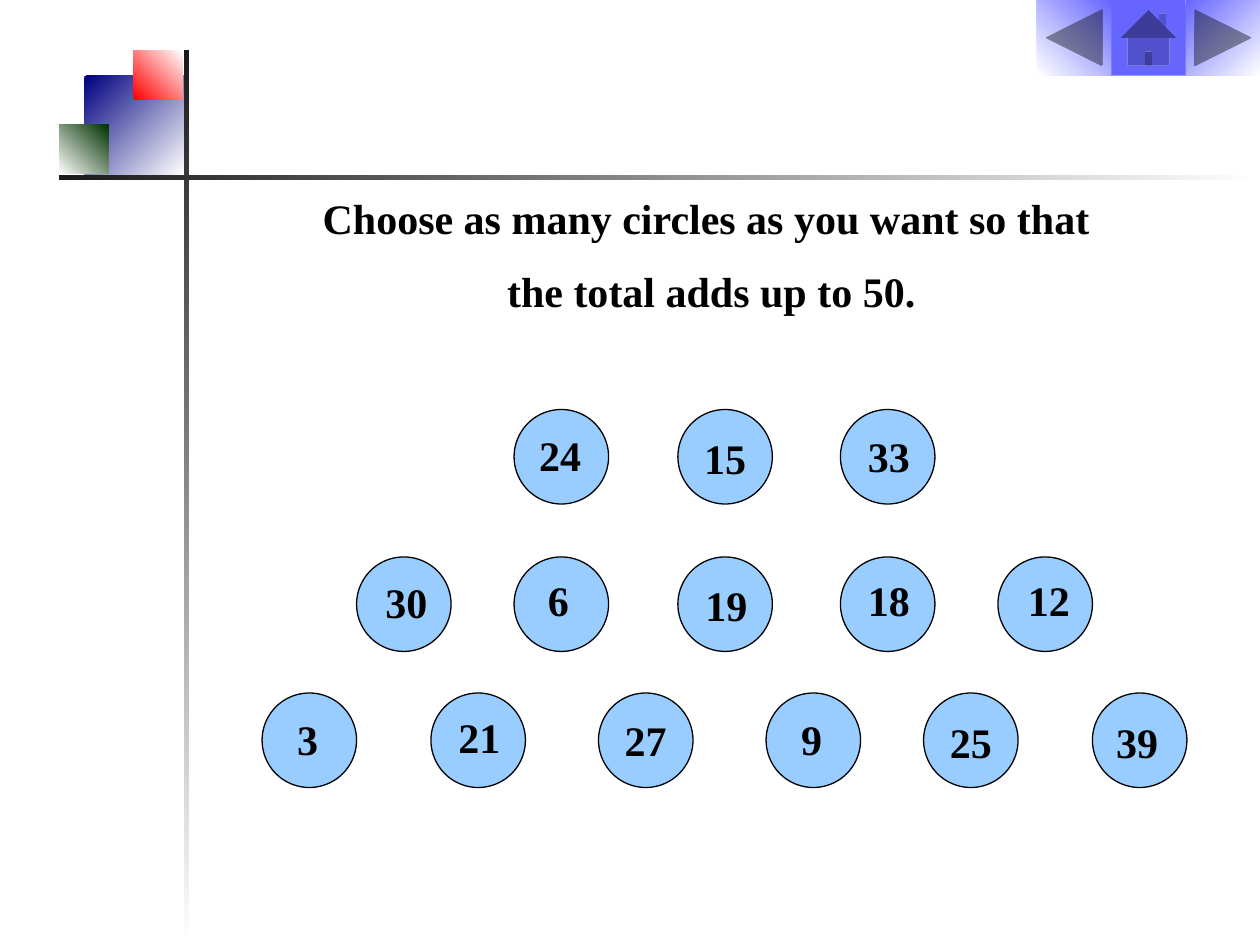
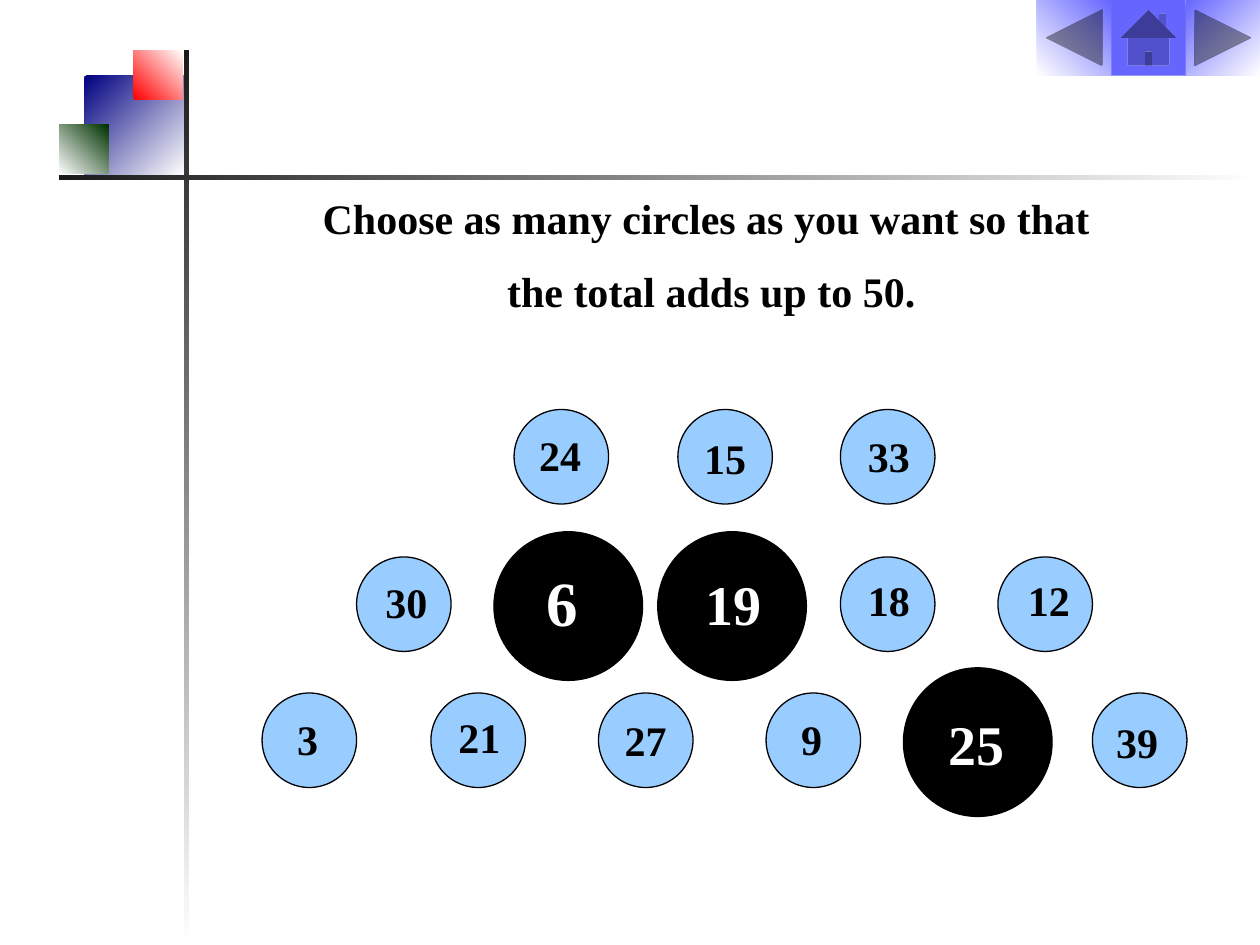
from dataclasses import dataclass

from pptx import Presentation
from pptx.dml.color import RGBColor
from pptx.enum.shapes import MSO_SHAPE
from pptx.enum.text import MSO_AUTO_SIZE, PP_ALIGN
from pptx.util import Inches, Pt

RECTANGLE = MSO_SHAPE.RECTANGLE
OVAL = MSO_SHAPE.OVAL
BACK_BUTTON = MSO_SHAPE.ACTION_BUTTON_BACK_OR_PREVIOUS
NEXT_BUTTON = MSO_SHAPE.ACTION_BUTTON_FORWARD_OR_NEXT
HOME_BUTTON = MSO_SHAPE.ACTION_BUTTON_HOME
LEFT, CENTER = PP_ALIGN.LEFT, PP_ALIGN.CENTER
GROW = MSO_AUTO_SIZE.SHAPE_TO_FIT_TEXT


@dataclass(frozen=True)
class Theme:
    font: str = "Times New Roman"
    body_size: int = 24
    line_gap: int = 13
    outline_width: float = 0.75
    ink: str = "000000"
    paper: str = "FFFFFF"
    circle: str = "99CCFF"
    navy: str = "000080"
    red: str = "FF0000"
    green: str = "003300"
    rule: str = "1A1A1A"
    button: str = "6666FF"


THEME = Theme()

INSTRUCTION = [
    "Choose as many circles as you want so that ",
    "the total adds up to 50.",
]

CIRCLE_SIZE = 0.75
CHOSEN_SIZE = 1.18
CHOSEN_SHIFT = (-0.16, -0.2)
BUTTON_WIDTH, BUTTON_HEIGHT = 0.59, 0.6

# number, circle left, label offset right, label offset down
CIRCLE_ROWS = {
    3.25: [(24, 4.08, 0.10, 0.11), (15, 5.38, 0.11, 0.13), (33, 6.67, 0.12, 0.12)],
    4.42: [(30, 2.83, 0.13, 0.11), (6, 4.08, 0.17, 0.09), (19, 5.38, 0.12, 0.13),
           (18, 6.67, 0.12, 0.09), (12, 7.92, 0.14, 0.09)],
    5.5: [(3, 2.08, 0.18, 0.11), (21, 3.42, 0.12, 0.10), (27, 4.75, 0.11, 0.12),
          (9, 6.08, 0.18, 0.11), (25, 7.33, 0.11, 0.14), (39, 8.67, 0.09, 0.14)],
}

# number: label size, label offset right, label offset down
ANSWER = {6: (36, 0.16, 0), 19: (32, 0.12, 0.05), 25: (32, 0.10, 0.08)}


def rgb(value):
    return RGBColor.from_string(value)


def add_filled(slide, preset, box, color, end_color=None, angle=0, outline=None):
    shape = slide.shapes.add_shape(preset, *map(Inches, box))
    shape.shadow.inherit = False
    if end_color:
        shape.fill.gradient()
        shape.fill.gradient_angle = -angle % 360
        for stop, stop_color in zip(shape.fill.gradient_stops, (color, end_color)):
            stop.color.rgb = rgb(stop_color)
    else:
        shape.fill.solid()
        shape.fill.fore_color.rgb = rgb(color)
    if outline:
        shape.line.color.rgb = rgb(outline)
        shape.line.width = Pt(THEME.outline_width)
    else:
        shape.line.fill.background()


def add_text(slide, box, lines, size=THEME.body_size, color=THEME.ink, align=LEFT):
    frame = slide.shapes.add_textbox(*map(Inches, box)).text_frame
    frame.word_wrap = True
    frame.auto_size = GROW
    for index, line in enumerate(lines):
        paragraph = frame.add_paragraph() if index else frame.paragraphs[0]
        if index:
            paragraph.space_before = Pt(THEME.line_gap)
        paragraph.alignment = align
        run = paragraph.add_run()
        run.text = line
        run.font.name = THEME.font
        run.font.size = Pt(size)
        run.font.bold = True
        run.font.color.rgb = rgb(color)


def add_frame(slide):
    t = THEME
    add_filled(slide, RECTANGLE, (0.67, 0.6, 0.79, 0.79), t.navy, t.paper, 45)
    add_filled(slide, RECTANGLE, (1.06, 0.4, 0.39, 0.39), t.red, t.paper, 315)
    add_filled(slide, RECTANGLE, (0.47, 0.99, 0.39, 0.39), t.paper, t.green, 315)
    add_filled(slide, RECTANGLE, (1.46, 0.4, 0.04, 7.1), t.rule, t.paper, 90)
    add_filled(slide, RECTANGLE, (0.47, 1.39, 9.53, 0.04), t.rule, t.paper)


def add_navigation(slide):
    buttons = [
        (BACK_BUTTON, 8.23, THEME.paper, THEME.button, 315),
        (NEXT_BUTTON, 9.41, THEME.button, THEME.paper, 45),
        (HOME_BUTTON, 8.82, THEME.button, None, 0),
    ]
    for preset, left, color, end_color, angle in buttons:
        box = (left, 0, BUTTON_WIDTH, BUTTON_HEIGHT)
        add_filled(slide, preset, box, color, end_color, angle)


def add_number(slide, number, left, top, right, down, chosen):
    size, fill, ink, diameter = THEME.body_size, THEME.circle, THEME.ink, CIRCLE_SIZE
    circle_left, circle_top = left, top
    if number in chosen:
        size, right, down = chosen[number]
        fill, ink, diameter = THEME.ink, THEME.paper, CHOSEN_SIZE
        circle_left += CHOSEN_SHIFT[0]
        circle_top += CHOSEN_SHIFT[1]
    add_filled(slide, OVAL, (circle_left, circle_top, diameter, diameter), fill,
               outline=THEME.ink)
    label_height = 0.1 + size / 60
    add_text(slide, (left + right, top + down, CIRCLE_SIZE, label_height),
             [str(number)], size=size, color=ink)


def add_puzzle(deck, chosen):
    slide = deck.slides.add_slide(deck.slide_layouts[6])
    add_frame(slide)
    add_navigation(slide)
    add_text(slide, (2.12, 1.48, 7.05, 1.1), INSTRUCTION, align=CENTER)
    for top, row in CIRCLE_ROWS.items():
        for number, left, right, down in row:
            add_number(slide, number, left, top, right, down, chosen)


def main():
    deck = Presentation()
    deck.slide_width = Inches(10)
    deck.slide_height = Inches(7.5)
    add_puzzle(deck, chosen={})
    add_puzzle(deck, chosen=ANSWER)
    deck.save("out.pptx")


if __name__ == "__main__":
    main()
